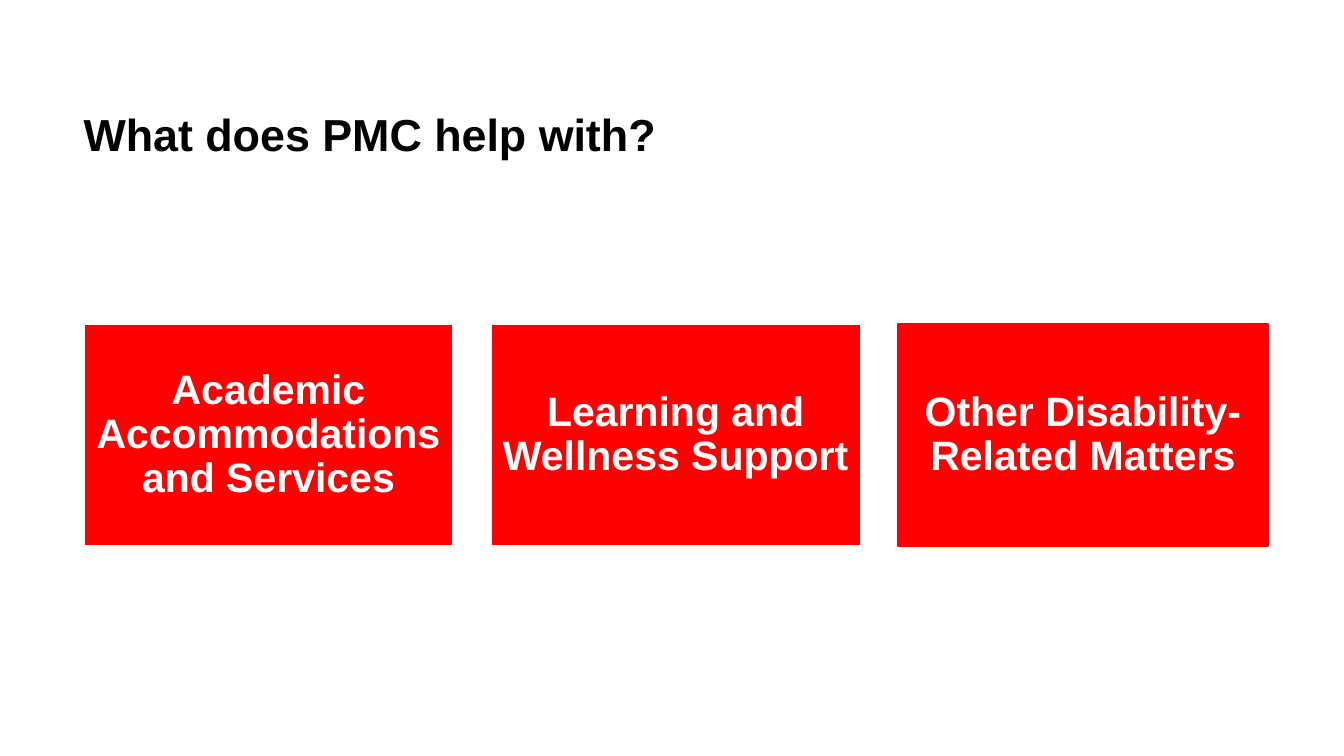
from pptx import Presentation
from pptx.dml.color import RGBColor
from pptx.enum.shapes import MSO_SHAPE as Shape
from pptx.enum.text import MSO_ANCHOR as Anchor, PP_ALIGN as Align
from pptx.util import Cm, Pt

RED, WHITE, BLACK = "FF0000", "FFFFFF", "000000"
TOPICS = [
    ("Academic Accommodations and Services", WHITE),
    ("Learning and Wellness Support", WHITE),
    ("Other Disability-Related Matters", RED),
]
TITLE_FORMAT = {"size": Pt(24), "name": "Arial", "bold": True}
CARD_FORMAT = {"size": Pt(22), "name": "Arial", "bold": True}


def color(value):
    return RGBColor.from_string(value)


def write(shape, text, font_format, font_color, inset, anchor, align):
    frame = shape.text_frame
    frame.word_wrap = True
    frame.vertical_anchor = anchor
    for side in ("left", "top", "right", "bottom"):
        setattr(frame, f"margin_{side}", Cm(inset))
    para = frame.paragraphs[0]
    para.alignment = align
    para.line_spacing = 0.9
    span = para.add_run()
    span.text = text
    for key, value in font_format.items():
        setattr(span.font, key, value)
    span.font.color.rgb = color(font_color)


def add_title(page, left, top, width, height, text):
    box = page.shapes.add_textbox(Cm(left), Cm(top), Cm(width), Cm(height))
    write(box, text, TITLE_FORMAT, BLACK, 0, Anchor.TOP, Align.LEFT)


def add_topic_cards(page, left, top, width, height, topics, gap=0.71):
    """Share the width equally among the topics, with a fixed gap between."""
    card_width = (width - gap * (len(topics) - 1)) / len(topics)
    for index, (text, line_color) in enumerate(topics):
        card_left = left + index * (card_width + gap)
        card = page.shapes.add_shape(
            Shape.RECTANGLE, Cm(card_left), Cm(top), Cm(card_width), Cm(height))
        card.shadow.inherit = False
        card.fill.solid()
        card.fill.fore_color.rgb = color(RED)
        card.line.color.rgb = color(line_color)
        card.line.width = Pt(1)
        write(card, text, CARD_FORMAT, WHITE, 0.22, Anchor.MIDDLE, Align.CENTER)


def main():
    deck = Presentation()
    deck.slide_width, deck.slide_height = Cm(25.4), Cm(14.29)
    page = deck.slides.add_slide(deck.slide_layouts[6])
    add_title(page, 1.58, 2.13, 22.38, 2, "What does PMC help with?")
    add_topic_cards(page, 1.58, 6.13, 22.38, 4.19, TOPICS)
    deck.save("out.pptx")


if __name__ == "__main__":
    main()
